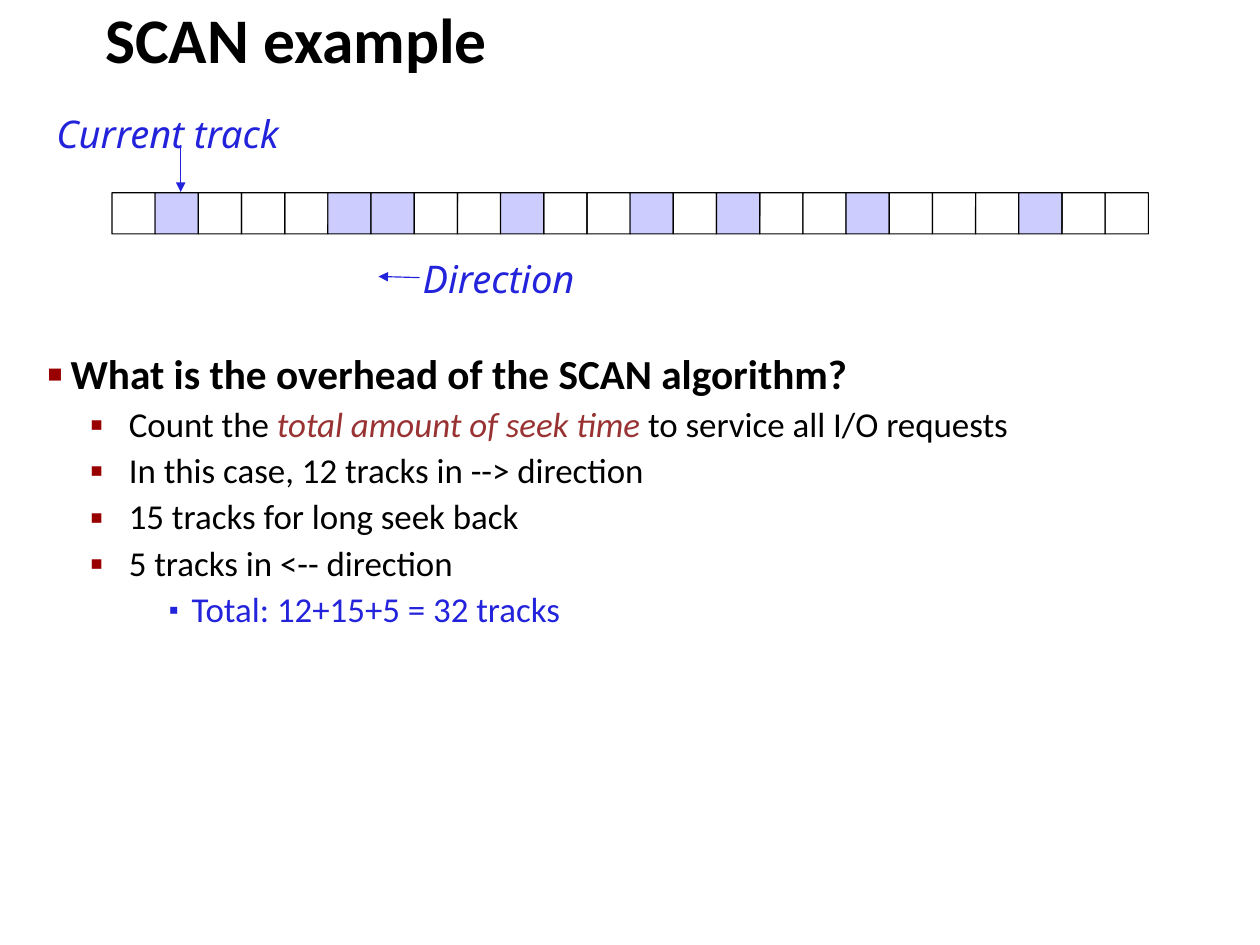
from lxml.etree import SubElement
from pptx import Presentation
from pptx.dml.color import RGBColor
from pptx.enum.shapes import MSO_CONNECTOR, MSO_SHAPE
from pptx.enum.text import MSO_ANCHOR, MSO_AUTO_SIZE, PP_ALIGN
from pptx.oxml.ns import qn
from pptx.util import Cm, Inches, Pt

COLORS = {
    "text": "000000",
    "label": "2323DC",
    "emphasis": "993333",
    "bullet": "990000",
    "request": "CCCCFF",
}
TRACK_COUNT = 24
REQUESTED_TRACKS = {1, 5, 6, 9, 12, 14, 17, 21}
TRACK_LEFT, TRACK_TOP, TRACK_HEIGHT = 8.89, 20.4, 4.35
TRACK_WIDTH = 82.25 / TRACK_COUNT

presentation = Presentation()
presentation.slide_width = Cm(28)
presentation.slide_height = Cm(21)
slide = presentation.slides.add_slide(presentation.slide_layouts[1])


def grid(*values):
    """Turn alternating x and y percentages of the slide into lengths."""
    sides = (presentation.slide_width, presentation.slide_height)
    return [int(value * sides[i % 2] / 100) for i, value in enumerate(values)]


def write(paragraph, text, size, color="text", font="Calibri", bold=False, italic=False):
    paragraph.alignment = PP_ALIGN.LEFT
    paragraph.line_spacing = 0.94
    run = paragraph.add_run()
    run.text = text
    run.font.name = font
    run.font.size = Pt(size)
    run.font.bold = bold
    run.font.italic = italic
    run.font.color.rgb = RGBColor.from_string(COLORS[color])


# Title and body placeholders
title, body = slide.shapes.title, slide.placeholders[1]
for placeholder, area, anchor in (
    (title, (7.35, 1, 85.39, 6.89), MSO_ANCHOR.MIDDLE),
    (body, (1.7, 36.55, 96.37, 35.91), MSO_ANCHOR.TOP),
):
    placeholder.left, placeholder.top, placeholder.width, placeholder.height = grid(*area)
    frame = placeholder.text_frame
    frame.auto_size = MSO_AUTO_SIZE.NONE
    frame.vertical_anchor = anchor
    frame.margin_left = frame.margin_right = Inches(0.11)
    frame.margin_top = frame.margin_bottom = Inches(0.06)
write(title.text_frame.paragraphs[0], "SCAN example", 40, bold=True)

# Disk tracks
for track in range(TRACK_COUNT):
    cell = slide.shapes.add_shape(
        MSO_SHAPE.ROUNDED_RECTANGLE,
        *grid(TRACK_LEFT + track * TRACK_WIDTH, TRACK_TOP, TRACK_WIDTH, TRACK_HEIGHT),
    )
    cell.adjustments[0] = 0.005
    cell.shadow.inherit = False
    cell.line.color.rgb = RGBColor.from_string(COLORS["text"])
    cell.line.width = Pt(0.75)
    if track in REQUESTED_TRACKS:
        cell.fill.solid()
        cell.fill.fore_color.rgb = RGBColor.from_string(COLORS["request"])
    else:
        cell.fill.background()

# Labels with their arrows; the current track marker is grouped
current_track = slide.shapes.add_group_shape()
for shapes, text, area, ends, arrowhead in (
    (slide.shapes, "Direction", (33.55, 27.4, 12.2, 3.51),
     (30.04, 29.26, 33.3, 29.38), "a:headEnd"),
    (current_track.shapes, "Current track", (4.47, 12.09, 17.9, 3.51),
     (14.34, 15.36, 14.34, 20.31), "a:tailEnd"),
):
    label = shapes.add_textbox(*grid(*area))
    frame = label.text_frame
    frame.word_wrap = False
    frame.margin_left = frame.margin_right = frame.margin_top = frame.margin_bottom = 0
    write(frame.paragraphs[0], text, 24, "label", font="Noto Sans", italic=True)

    arrow = shapes.add_connector(MSO_CONNECTOR.STRAIGHT, *grid(*ends))
    arrow.line.color.rgb = RGBColor.from_string(COLORS["label"])
    arrow.line.width = Pt(0.75)
    outline_properties = arrow._element.spPr.find(qn("a:ln"))
    SubElement(outline_properties, qn(arrowhead), type="triangle")
    SubElement(arrow._element.spPr, qn("a:effectLst"))

# Question and answer, by outline level
level_formats = [
    {"margin": 0.32, "hanging": 0.2, "bullet": "■", "scale": 60, "color": "bullet",
     "size": 26, "bold": True},
    {"margin": 0.83, "hanging": 0.34, "bullet": "▪", "scale": 110, "color": "bullet",
     "size": 22, "bold": False},
    {"margin": 1.38, "hanging": 0.2, "bullet": "▪", "scale": 80, "color": "label",
     "size": 22, "bold": False},
]
outline = [
    (0, [("What is the overhead of the SCAN algorithm?", "text")]),
    (1, [("Count the ", "text"), ("total amount of seek time ", "emphasis"),
         ("to service all I/O requests", "text")]),
    (1, [("In this case, 12 tracks in --> direction", "text")]),
    (1, [("15 tracks for long seek back", "text")]),
    (1, [("5 tracks in <-- direction", "text")]),
    (2, [("Total: 12+15+5 = 32 tracks", "label")]),
]
for index, (level, pieces) in enumerate(outline):
    frame = body.text_frame
    paragraph = frame.add_paragraph() if index else frame.paragraphs[0]
    style = level_formats[level]
    paragraph.level = level
    paragraph.space_before = Pt(style["size"] * 0.2)
    for text, color in pieces:
        write(paragraph, text, style["size"], color,
              bold=style["bold"], italic=color == "emphasis")
    properties = paragraph._p.get_or_add_pPr()
    properties.set("marL", str(Inches(style["margin"])))
    properties.set("indent", str(-Inches(style["hanging"])))
    bullet_color = SubElement(properties, qn("a:buClr"))
    SubElement(bullet_color, qn("a:srgbClr"), val=COLORS[style["color"]])
    SubElement(properties, qn("a:buSzPct"), val=str(style["scale"] * 1000))
    SubElement(properties, qn("a:buChar"), char=style["bullet"])

presentation.save("out.pptx")
